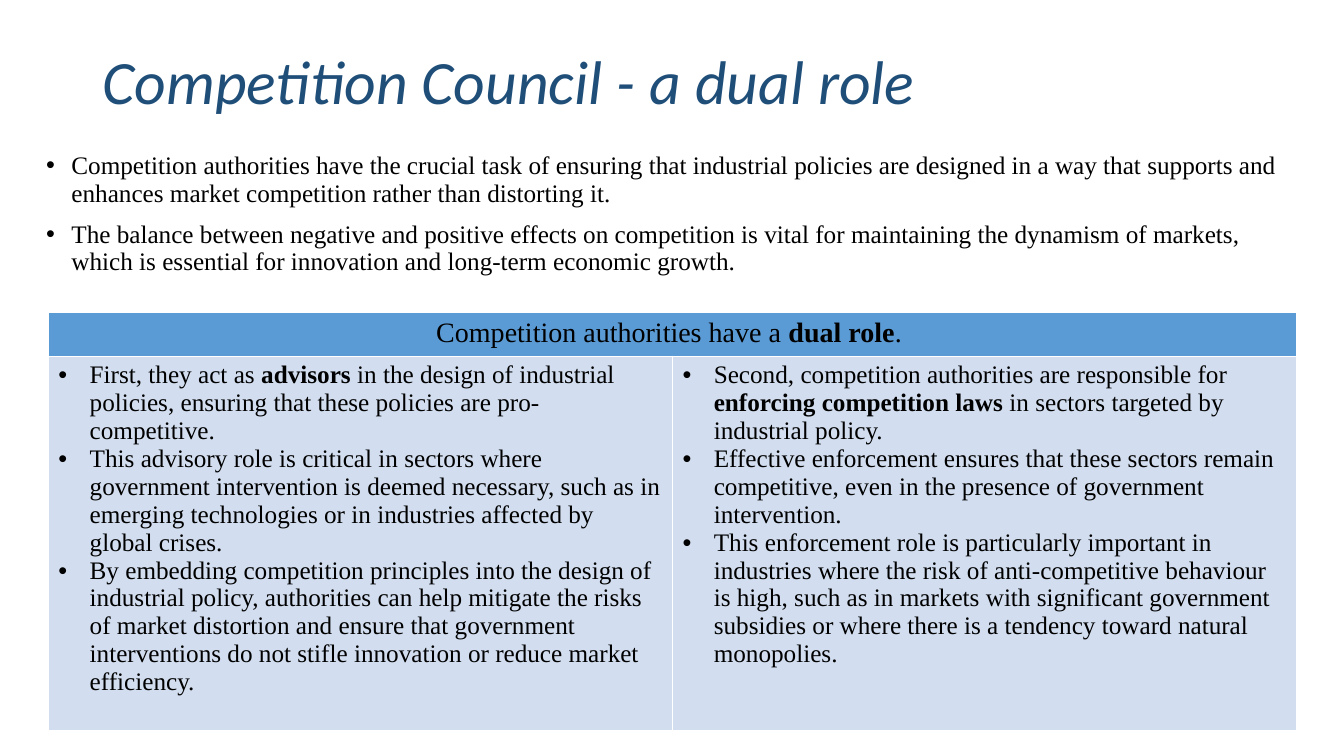
from lxml import etree
from pptx import Presentation
from pptx.dml.color import RGBColor
from pptx.enum.text import MSO_ANCHOR, PP_ALIGN
from pptx.oxml.ns import qn
from pptx.util import Inches, Pt

MIDDLE = MSO_ANCHOR.MIDDLE
CENTER = PP_ALIGN.CENTER
NAVY = RGBColor(0x1F, 0x4E, 0x79)
BLACK = RGBColor(0, 0, 0)
HEADER_BLUE = RGBColor(0x5B, 0x9B, 0xD5)
CELL_BLUE = RGBColor(0xD2, 0xDE, 0xEF)
SERIF = "Times New Roman"

INTRODUCTION = [
    "Competition authorities have the crucial task of ensuring that industrial policies are designed "
    "in a way that supports and enhances market competition rather than distorting it.",
    "The balance between negative and positive effects on competition is vital for maintaining the "
    "dynamism of markets, which is essential for innovation and long-term economic growth.",
]
HEADER = "Competition authorities have a **dual role**. "
ROLES = [
    [
        "First, they act as **advisors** in the design of industrial policies, ensuring that these "
        "policies are pro-competitive.",
        "This advisory role is critical in sectors where government intervention is deemed necessary, "
        "such as in emerging technologies or in industries affected by global crises.",
        "By embedding competition principles into the design of industrial policy, authorities can help "
        "mitigate the risks of market distortion and ensure that government interventions do not stifle "
        "innovation or reduce market efficiency.",
    ],
    [
        "Second, competition authorities are responsible for **enforcing competition laws** in sectors "
        "targeted by industrial policy.",
        "Effective enforcement ensures that these sectors remain competitive, even in the presence of "
        "government intervention.",
        "This enforcement role is particularly important in industries where the risk of "
        "anti-competitive behaviour is high, such as in markets with significant government subsidies "
        "or where there is a tendency toward natural monopolies.",
    ],
]


def write_runs(paragraph, text, size):
    for index, part in enumerate(text.split("**")):
        run = paragraph.add_run()
        run.text = part
        run.font.name = SERIF
        run.font.size = Pt(size)
        run.font.bold = index % 2 == 1
        run.font.color.rgb = BLACK


def write_bullets(text_frame, items, indent, line_spacing, space_before):
    for index, item in enumerate(items):
        paragraph = text_frame.paragraphs[0] if index == 0 else text_frame.add_paragraph()
        properties = paragraph._p.get_or_add_pPr()
        properties.set("marL", str(Inches(indent)))
        properties.set("indent", str(-Inches(indent)))
        etree.SubElement(properties, qn("a:buFont")).set("typeface", "Arial")
        etree.SubElement(properties, qn("a:buChar")).set("char", "•")
        paragraph.line_spacing = line_spacing
        paragraph.space_before = Pt(space_before if index else 0)
        write_runs(paragraph, item, 18)


presentation = Presentation()
presentation.slide_width = Inches(13.33)
presentation.slide_height = Inches(7.5)
slide = presentation.slides.add_slide(presentation.slide_layouts[6])

title = slide.shapes.add_textbox(Inches(0.92), Inches(0.4), Inches(11.5), Inches(0.88))
title.text_frame.word_wrap = True
title.text_frame.vertical_anchor = MIDDLE
title.text_frame.text = "Competition Council - a dual role"
title_paragraph = title.text_frame.paragraphs[0]
title_paragraph.line_spacing = 0.9
title_font = title_paragraph.runs[0].font
title_font.name = "Calibri"
title_font.size = Pt(44)
title_font.italic = True
title_font.color.rgb = NAVY

introduction = slide.shapes.add_textbox(Inches(0.36), Inches(1.47), Inches(12.61), Inches(1.44))
introduction.text_frame.word_wrap = True
write_bullets(introduction.text_frame, INTRODUCTION, 0.25, 0.9, 10)

table = slide.shapes.add_table(2, 2, Inches(0.48), Inches(3.1), Inches(12.38), Inches(4.12)).table
table.rows[0].height = Inches(0.41)
table.rows[1].height = Inches(3.71)

header = table.cell(0, 0)
header.merge(table.cell(0, 1))
header.fill.solid()
header.fill.fore_color.rgb = HEADER_BLUE
header_paragraph = header.text_frame.paragraphs[0]
header_paragraph.alignment = CENTER
write_runs(header_paragraph, HEADER, 20)

for column, items in enumerate(ROLES):
    cell = table.cell(1, column)
    cell.fill.solid()
    cell.fill.fore_color.rgb = CELL_BLUE
    write_bullets(cell.text_frame, items, 0.31, 1.0, 0)

presentation.save("out.pptx")
